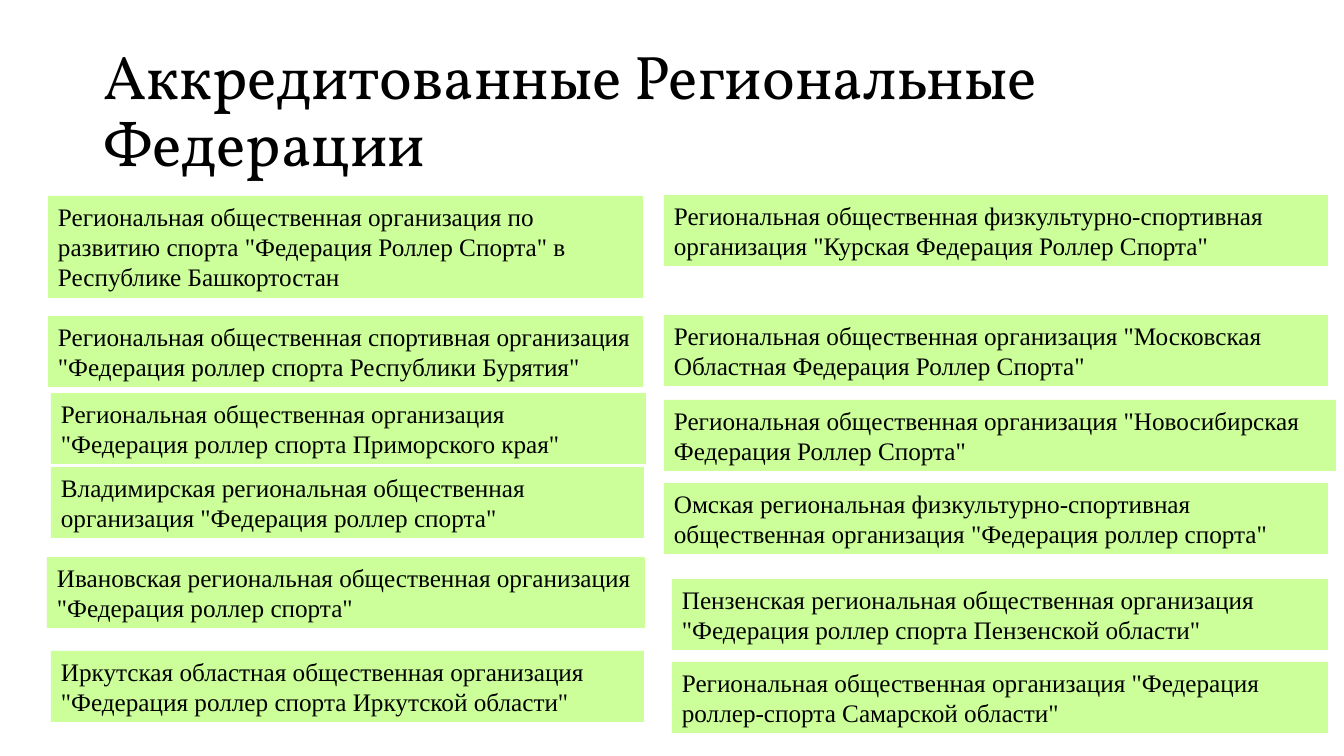
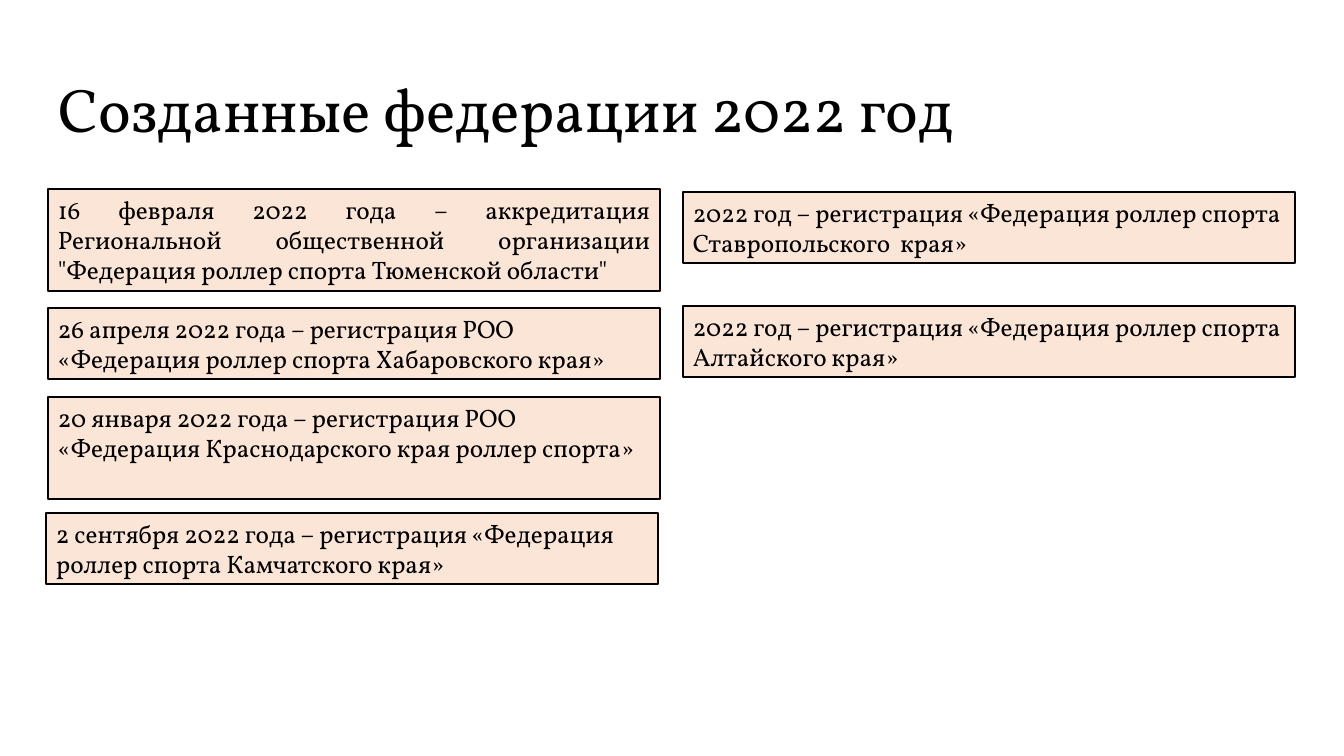
from dataclasses import dataclass

from pptx import Presentation
from pptx.dml.color import RGBColor
from pptx.enum.shapes import MSO_SHAPE
from pptx.enum.text import MSO_ANCHOR, MSO_AUTO_SIZE, PP_ALIGN
from pptx.util import Emu, Pt


@dataclass(frozen=True)
class Theme:
    ink: RGBColor = RGBColor(0x00, 0x00, 0x00)
    paper: RGBColor = RGBColor(0xFF, 0xFF, 0xFF)
    green: RGBColor = RGBColor(0xCC, 0xFF, 0x99)
    peach: RGBColor = RGBColor(0xFB, 0xE5, 0xD6)
    serif: str = "Times New Roman"
    display: str = "Vollkorn"
    title_size: Pt = Pt(44)
    body_size: Pt = Pt(18)
    border: Pt = Pt(1)


THEME = Theme()
SLIDE_W, SLIDE_H = 1344, 756
EMU_PER_PX = 12192000 / SLIDE_W
TITLE_TOP, TITLE_RIGHT, TITLE_H = 40, 1252, 146
TWO_LINES, THREE_LINES = 71, 102


def px(length):
    return Emu(round(length * EMU_PER_PX))


def write(sp, text, font, size, anchor, align=PP_ALIGN.LEFT):
    """Put one run of text into a shape and return its paragraph."""
    tf = sp.text_frame
    tf.word_wrap = True
    tf.auto_size = MSO_AUTO_SIZE.NONE
    tf.vertical_anchor = anchor
    p = tf.paragraphs[0]
    p.alignment = align
    r = p.add_run()
    r.text = text
    r.font.name = font
    r.font.size = size
    r.font.color.rgb = THEME.ink
    return p


# Each box: left, top, width, height, text, alignment
L, J = PP_ALIGN.LEFT, PP_ALIGN.JUSTIFY

accredited = [
    (48, 196, 595, THREE_LINES, 'Региональная общественная организация по развитию спорта '
     '"Федерация Роллер Спорта" в Республике Башкортостан', L),
    (48, 316, 595, TWO_LINES, 'Региональная общественная спортивная организация '
     '"Федерация роллер спорта Республики Бурятия"', L),
    (51, 393, 595, TWO_LINES, 'Региональная общественная организация '
     '"Федерация роллер спорта Приморского края"', L),
    (51, 467, 593, TWO_LINES, 'Владимирская региональная общественная организация '
     '"Федерация роллер спорта"', L),
    (47, 557, 598, TWO_LINES, 'Ивановская региональная общественная организация '
     '"Федерация роллер спорта"', L),
    (51, 651, 593, TWO_LINES, 'Иркутская областная общественная организация '
     '"Федерация роллер спорта Иркутской области"', L),
    (664, 195, 664, TWO_LINES, 'Региональная общественная физкультурно-спортивная организация '
     '"Курская Федерация Роллер Спорта"', L),
    (664, 315, 664, TWO_LINES, 'Региональная общественная организация '
     '"Московская Областная Федерация Роллер Спорта"', L),
    (664, 400, 672, TWO_LINES, 'Региональная общественная организация '
     '"Новосибирская Федерация Роллер Спорта"', L),
    (664, 483, 664, TWO_LINES, 'Омская региональная физкультурно-спортивная общественная '
     'организация "Федерация роллер спорта"', L),
    (672, 579, 656, TWO_LINES, 'Пензенская региональная общественная организация '
     '"Федерация роллер спорта Пензенской области"', L),
    (672, 662, 656, TWO_LINES, 'Региональная общественная организация '
     '"Федерация роллер-спорта Самарской области"', L),
]

founded = [
    (48, 189, 612, THREE_LINES, '16 февраля 2022 года – аккредитация Региональной общественной '
     'организации "Федерация роллер спорта Тюменской области"', J),
    (48, 308, 612, TWO_LINES, '26 апреля 2022 года – регистрация РОО '
     '«Федерация роллер спорта Хабаровского края»', L),
    (48, 397, 612, THREE_LINES, '20 января 2022 года – регистрация РОО '
     '«Федерация Краснодарского края роллер спорта»', L),
    (46, 513, 612, TWO_LINES, '2 сентября 2022 года – регистрация '
     '«Федерация роллер спорта Камчатского края»', L),
    (683, 192, 612, TWO_LINES, '2022 год – регистрация '
     '«Федерация роллер спорта Ставропольского  края»', L),
    (683, 306, 612, TWO_LINES, '2022 год – регистрация '
     '«Федерация роллер спорта Алтайского края»', L),
]

# Each slide: title, title left, box fill, box font, outlined, boxes
slides = [
    ("Аккредитованные Региональные Федерации", 93, THEME.green, THEME.serif, False, accredited),
    ("Созданные федерации 2022 год", 48, THEME.peach, THEME.display, True, founded),
]

prs = Presentation()
prs.slide_width, prs.slide_height = px(SLIDE_W), px(SLIDE_H)
background = prs.slide_master.background.fill
background.solid()
background.fore_color.rgb = THEME.paper
title_only = prs.slide_layouts.get_by_name("Title Only")

for title_text, title_left, fill, font, outlined, boxes in slides:
    s = prs.slides.add_slide(title_only)
    title = s.shapes.title
    title.left, title.top = px(title_left), px(TITLE_TOP)
    title.width, title.height = px(TITLE_RIGHT - title_left), px(TITLE_H)
    p = write(title, title_text, THEME.display, THEME.title_size, MSO_ANCHOR.MIDDLE)
    p.line_spacing = 0.9

    for left, top, width, height, text, align in boxes:
        sp = s.shapes.add_shape(MSO_SHAPE.RECTANGLE, px(left), px(top), px(width), px(height))
        sp.shadow.inherit = False
        sp.fill.solid()
        sp.fill.fore_color.rgb = fill
        if outlined:
            sp.line.color.rgb = THEME.ink
            sp.line.width = THEME.border
        else:
            sp.line.fill.background()
        write(sp, text, font, THEME.body_size, MSO_ANCHOR.TOP, align)

prs.save("out.pptx")
